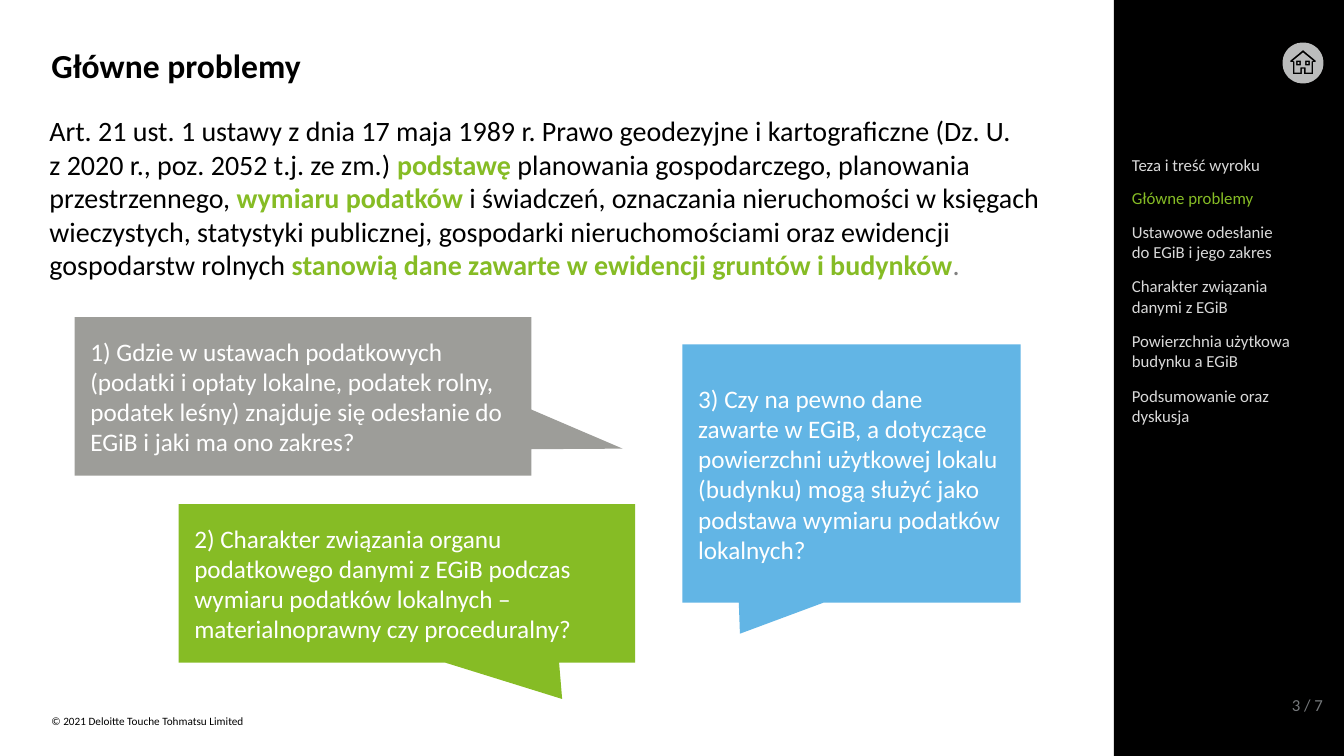
import math
from dataclasses import dataclass

from pptx import Presentation
from pptx.dml.color import RGBColor
from pptx.enum.shapes import MSO_SHAPE
from pptx.enum.text import MSO_ANCHOR, MSO_AUTO_SIZE, PP_ALIGN
from pptx.util import Pt

PX = 9525
RECTANGLE = MSO_SHAPE.RECTANGLE
CALLOUT = MSO_SHAPE.RECTANGULAR_CALLOUT
TOP, MIDDLE = MSO_ANCHOR.TOP, MSO_ANCHOR.MIDDLE
LEFT, RIGHT = PP_ALIGN.LEFT, PP_ALIGN.RIGHT
GROW, FIXED = MSO_AUTO_SIZE.SHAPE_TO_FIT_TEXT, MSO_AUTO_SIZE.NONE


@dataclass(frozen=True)
class Theme:
    font: str = "Calibri"
    black: str = "000000"
    white: str = "FFFFFF"
    green: str = "86BC25"
    blue: str = "62B5E5"
    stone: str = "9D9D99"
    full_stop: str = "808080"
    page: str = "75787B"
    menu: str = "D9D9D9"
    icon: str = "BBBCBC"
    title_size: int = 24
    body_size: int = 20
    callout_size: int = 18
    menu_size: int = 12
    footer_size: int = 8


class SlideBuilder:
    def __init__(self, slide, theme):
        self.shapes = slide.shapes
        self.theme = theme

    def paint(self, shape, color):
        shape.shadow.inherit = False
        shape.fill.solid()
        shape.fill.fore_color.rgb = RGBColor.from_string(color)
        shape.line.fill.background()

    def set_text(self, shape, runs, size, align=LEFT, anchor=TOP, inset=(0, 0), fit=GROW):
        frame = shape.text_frame
        across, down = (value * PX for value in inset)
        frame_format = {
            "word_wrap": True,
            "auto_size": fit,
            "vertical_anchor": anchor,
            "margin_left": across,
            "margin_right": across,
            "margin_top": down,
            "margin_bottom": down,
        }
        for name, value in frame_format.items():
            setattr(frame, name, value)
        paragraph = frame.paragraphs[0]
        paragraph.alignment = align
        for text, color, bold in runs:
            for index, line in enumerate(text.split("\n")):
                if index:
                    paragraph.add_line_break()
                run = paragraph.add_run()
                run.text = line
                font_format = {"name": self.theme.font, "size": Pt(size), "bold": bold}
                for name, value in font_format.items():
                    setattr(run.font, name, value)
                run.font.color.rgb = RGBColor.from_string(color)

    def text(self, box, runs, size, **options):
        label = self.shapes.add_textbox(*(value * PX for value in box))
        self.set_text(label, runs, size, **options)

    def panel(self, box, color, preset=RECTANGLE):
        panel = self.shapes.add_shape(preset, *(value * PX for value in box))
        self.paint(panel, color)
        return panel

    def callout(self, box, pointer, color, question):
        callout = self.panel(box, color, CALLOUT)
        for index, value in enumerate(pointer):
            callout.adjustments[index] = value
        self.set_text(callout, [(question, self.theme.white, False)], self.theme.callout_size,
                      anchor=MIDDLE, inset=(15, 15), fit=FIXED)

    def icon(self, center, diameter, contours, color):
        builder = self.shapes.build_freeform(*contours[0][0], scale=diameter * PX / 200)
        for index, contour in enumerate(contours):
            if index:
                builder.move_to(*contour[0])
            builder.add_line_segments(contour[1:], close=True)
        self.paint(builder.convert_to_shape(*(value * PX for value in center)), color)


def mirrored(right_half):
    return right_half + [(-x, y) for x, y in reversed(right_half)]


def rectangle(left, top, right, bottom):
    return [(left, top), (right, top), (right, bottom), (left, bottom)]


def home_contours():
    angles = [math.radians(degrees) for degrees in range(0, 360, 5)]
    disc = [(round(100 * math.cos(a)), round(100 * math.sin(a))) for a in angles]
    walls = mirrored([(0, -63), (62, -12), (62, -4), (50, -4), (50, 54), (5, 54), (5, 28)])
    rooms = mirrored([(0, -51), (50, -10), (42, -8), (42, 47), (13, 47), (13, 21)])
    contours = [disc, walls, rooms]
    for middle in (-22, 22):
        contours.append(rectangle(middle - 12, -12, middle + 12, 12))
        contours.append(rectangle(middle - 4, -4, middle + 4, 4))
    return contours


def main():
    presentation = Presentation()
    presentation.slide_width, presentation.slide_height = 1280 * PX, 720 * PX
    theme = Theme()
    page = SlideBuilder(presentation.slides.add_slide(presentation.slide_layouts[6]), theme)

    page.text((49, 680, 563, 12),
              [("© 2021 Deloitte Touche Tohmatsu Limited", theme.black, False)], theme.footer_size)
    page.panel((1061, 0, 219, 720), theme.black)
    page.text((1079, 662, 181, 19), [("3 / 7", theme.page, False)], theme.menu_size, align=RIGHT)
    page.icon((1241, 60), 39, home_contours(), theme.icon)

    page.text((39, 38, 962, 36), [("Główne problemy", theme.black, True)],
              theme.title_size, inset=(10, 5), fit=FIXED)
    statute = [
        ("Art. 21 ust. 1 ustawy z dnia 17 maja 1989 r. Prawo geodezyjne i kartograficzne (Dz. U. \n"
         "z 2020 r., poz. 2052 t.j. ze zm.) ", theme.black, False),
        ("podstawę ", theme.green, True),
        ("planowania gospodarczego, planowania przestrzennego, ", theme.black, False),
        ("wymiaru podatków ", theme.green, True),
        ("i świadczeń, oznaczania nieruchomości w księgach wieczystych, statystyki publicznej, "
         "gospodarki nieruchomościami oraz ewidencji gospodarstw rolnych ", theme.black, False),
        ("stanowią dane zawarte w ewidencji gruntów i budynków", theme.green, True),
        (".", theme.full_stop, False),
    ]
    page.text((47, 108, 962, 161), statute, theme.body_size)

    questions = [
        ((71, 302, 435, 151), (0.7, 0.33), theme.stone,
         "1) Gdzie w ustawach podatkowych (podatki i opłaty lokalne, podatek rolny, "
         "podatek leśny) znajduje się odesłanie do EGiB i jaki ma ono zakres?"),
        ((170, 480, 435, 151), (0.34, 0.73), theme.green,
         "2) Charakter związania organu podatkowego danymi z EGiB podczas "
         "wymiaru podatków lokalnych – materialnoprawny czy proceduralny?"),
        ((650, 328, 322, 246), (-0.33, 0.62), theme.blue,
         "3) Czy na pewno dane zawarte w EGiB, a dotyczące powierzchni użytkowej lokalu "
         "(budynku) mogą służyć jako podstawa wymiaru podatków lokalnych?"),
    ]
    for question in questions:
        page.callout(*question)

    chapters = [
        ("Teza i treść wyroku", 148, 1, theme.menu),
        ("Główne problemy", 148, 1, theme.green),
        ("Ustawowe odesłanie do EGiB i jego zakres", 148, 2, theme.menu),
        ("Charakter związania danymi z EGiB", 166, 2, theme.menu),
        ("Powierzchnia użytkowa budynku a EGiB", 174, 2, theme.menu),
        ("Podsumowanie oraz dyskusja", 166, 2, theme.menu),
    ]
    line_height, gap, top = 20, 12, 147
    for chapter, width, lines, color in chapters:
        height = lines * line_height
        page.text((1078, top, width, height), [(chapter, color, False)], theme.menu_size)
        top += height + gap

    presentation.save("out.pptx")


if __name__ == "__main__":
    main()
